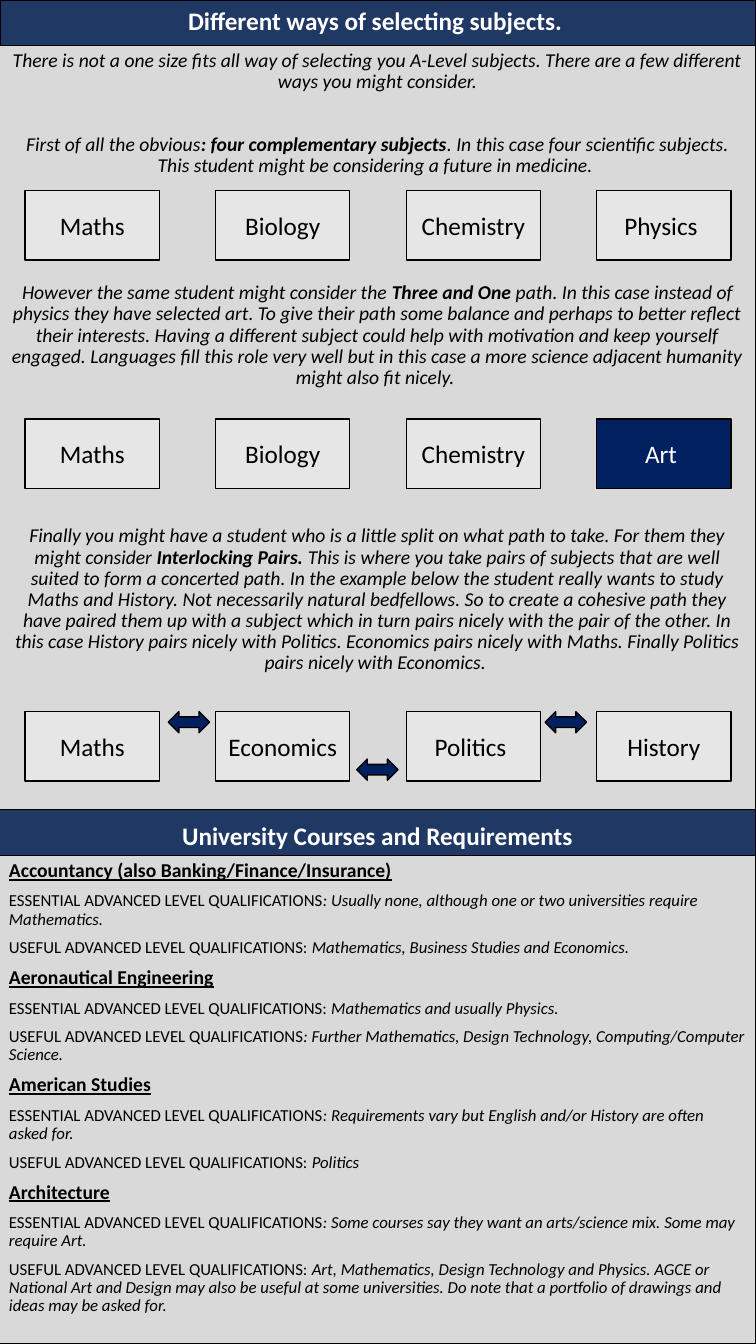
from dataclasses import dataclass

from pptx import Presentation
from pptx.dml.color import RGBColor
from pptx.enum.shapes import MSO_SHAPE as Shape
from pptx.enum.text import MSO_ANCHOR as Anchor, MSO_AUTO_SIZE as AutoSize, PP_ALIGN as Align
from pptx.util import Pt

COLORS = {
    "black": "000000",
    "white": "FFFFFF",
    "panel": "D9D9D9",
    "banner": "203864",
    "subject": "E7E6E6",
    "accent": "002060",
}
FONT = "Calibri"
ESSENTIAL = "ESSENTIAL ADVANCED LEVEL QUALIFICATIONS"
USEFUL = "USEFUL ADVANCED LEVEL QUALIFICATIONS"


@dataclass(frozen=True)
class Box:
    left: float
    top: float
    width: float
    height: float


@dataclass(frozen=True)
class Run:
    text: str
    size: float = 14
    bold: bool = False
    italic: bool = False
    underline: bool = False
    color: str = "black"


@dataclass(frozen=True)
class Block:
    runs: tuple[Run, ...]
    align: Align = Align.CENTER
    space_before: float = 0
    line_spacing: float = 0.9


@dataclass(frozen=True)
class SubjectRow:
    top: float
    subjects: tuple[str, ...]
    highlighted: str = ""


@dataclass(frozen=True)
class Course:
    name: str
    essential: tuple[str, str]
    useful: tuple[str, str]


def prose(space_before: float, before: str, bold: str = "", after: str = "") -> Block:
    parts = ((before, False), (bold, True), (after, False))
    runs = tuple(Run(text, bold=strong, italic=True) for text, strong in parts if text)
    return Block(runs, space_before=space_before)


def course_blocks(course: Course) -> list[Block]:
    lines = [(Run(course.name, bold=True, underline=True),)]
    for label, answer in (course.essential, course.useful):
        lines.append((Run(label, 12), Run(answer, 12, italic=True)))
    return [Block(runs, Align.LEFT, 7.5) for runs in lines]


def heading(text: str) -> list[Block]:
    return [Block((Run(text, 18, bold=True, color="white"),))]


def style(shape, fill: str, line_width: float) -> None:
    shape.fill.solid()
    shape.fill.fore_color.rgb = RGBColor.from_string(COLORS[fill])
    shape.line.color.rgb = RGBColor.from_string(COLORS["black"])
    shape.line.width = Pt(line_width)


def write(shape, blocks: list[Block], anchor: Anchor) -> None:
    frame = shape.text_frame
    frame.word_wrap = True
    frame.auto_size = AutoSize.NONE
    frame.vertical_anchor = anchor
    frame.margin_left = frame.margin_right = Pt(7.2)
    frame.margin_top = frame.margin_bottom = Pt(3.6)
    for index, block in enumerate(blocks):
        paragraph = frame.add_paragraph() if index else frame.paragraphs[0]
        paragraph.alignment = block.align
        paragraph.line_spacing = block.line_spacing
        paragraph.space_before = Pt(block.space_before)
        for item in block.runs:
            run = paragraph.add_run()
            run.text = item.text
            run.font.name = FONT
            run.font.size = Pt(item.size)
            run.font.bold = item.bold
            run.font.italic = item.italic
            run.font.underline = item.underline
            run.font.color.rgb = RGBColor.from_string(COLORS[item.color])


def add_box(slide, box: Box, fill: str, line_width: float, kind: Shape = Shape.RECTANGLE):
    shape = slide.shapes.add_shape(
        kind, Pt(box.left), Pt(box.top), Pt(box.width), Pt(box.height))
    shape.shadow.inherit = False
    style(shape, fill, line_width)
    return shape


def add_title(slide, box: Box, text: str) -> None:
    title = slide.shapes.title
    title.left, title.top = Pt(box.left), Pt(box.top)
    title.width, title.height = Pt(box.width), Pt(box.height)
    style(title, "banner", 0.75)
    write(title, heading(text), Anchor.MIDDLE)


def add_subject_row(slide, row: SubjectRow) -> None:
    for column, subject in enumerate(row.subjects):
        chosen = subject == row.highlighted
        box = Box(18 + 136.1 * column, row.top, 95.8, 49.7)
        shape = add_box(slide, box, "accent" if chosen else "subject", 1)
        run = Run(subject, 18, color="white" if chosen else "black")
        write(shape, [Block((run,), line_spacing=1)], Anchor.MIDDLE)


ADVICE = [
    prose(7.5, "There is not a one size fits all way of selecting you A-Level subjects. "
          "There are a few different ways you might consider."),
    prose(30, "First of all the obvious", ": four complementary subjects",
          ". In this case four scientific subjects. "
          "This student might be considering a future in medicine. "),
    prose(75.5, "However the same student might consider the ", "Three and One ",
          "path. In this case instead of physics they have selected art. To give their path "
          "some balance and perhaps to better reflect their interests. Having a different "
          "subject could help with motivation and keep yourself engaged. Languages fill this "
          "role very well but in this case a more science adjacent humanity might also fit "
          "nicely. "),
    prose(98, "Finally you might have a student who is a little split on what path to take. "
          "For them they might consider ", "Interlocking Pairs. ",
          "This is where you take pairs of subjects that are well suited to form a concerted "
          "path. In the example below the student really wants to study Maths and History. "
          "Not necessarily natural bedfellows. So to create a cohesive path they have paired "
          "them up with a subject which in turn pairs nicely with the pair of the other. In "
          "this case History pairs nicely with Politics. Economics pairs nicely with Maths. "
          "Finally Politics pairs nicely with Economics. "),
]
ROWS = [
    SubjectRow(136, ("Maths", "Biology", "Chemistry", "Physics ")),
    SubjectRow(299.3, ("Maths", "Biology", "Chemistry", "Art "), "Art "),
    SubjectRow(508.2, ("Maths", "Economics", "Politics ", "History")),
]
ARROW_TOPS = (508.3, 542.2, 508.3)
COURSES = [
    Course("Accountancy (also Banking/Finance/Insurance)",
           (ESSENTIAL, ": Usually none, although one or two universities require Mathematics."),
           (USEFUL + ": ", "Mathematics, Business Studies and Economics.")),
    Course("Aeronautical Engineering",
           (ESSENTIAL + ":", " Mathematics and usually Physics."),
           (USEFUL, ": Further Mathematics, Design Technology, Computing/Computer Science.")),
    Course("American Studies",
           (ESSENTIAL, ": Requirements vary but English and/or History are often asked for."),
           (USEFUL + ": ", "Politics")),
    Course("Architecture",
           (ESSENTIAL, ": Some courses say they want an arts/science mix. Some may require Art."),
           (USEFUL + ": ", "Art, Mathematics, Design Technology and Physics. AGCE or National "
            "Art and Design may also be useful at some universities. Do note that a portfolio "
            "of drawings and ideas may be asked for.")),
]


def main() -> None:
    presentation = Presentation()
    presentation.slide_width, presentation.slide_height = Pt(540), Pt(960)
    slide = presentation.slides.add_slide(presentation.slide_layouts[5])
    add_title(slide, Box(0, 0, 540, 32.4), "Different ways of selecting subjects. ")

    advice = add_box(slide, Box(-0.7, 32.4, 540.7, 545.8), "panel", 0.75)
    write(advice, ADVICE, Anchor.TOP)
    for row in ROWS:
        add_subject_row(slide, row)
    for index, top in enumerate(ARROW_TOPS):
        arrow = Box(120.2 + 134.6 * index, top, 29.5, 15.1)
        add_box(slide, arrow, "accent", 1, Shape.LEFT_RIGHT_ARROW)

    courses = add_box(slide, Box(-0.7, 611.3, 540.7, 348.5), "panel", 0.75)
    write(courses, [block for course in COURSES for block in course_blocks(course)], Anchor.TOP)
    banner = add_box(slide, Box(-0.7, 578.2, 540.7, 33.1), "banner", 0.75)
    write(banner, heading("University Courses and Requirements"), Anchor.BOTTOM)
    presentation.save("out.pptx")


if __name__ == "__main__":
    main()
